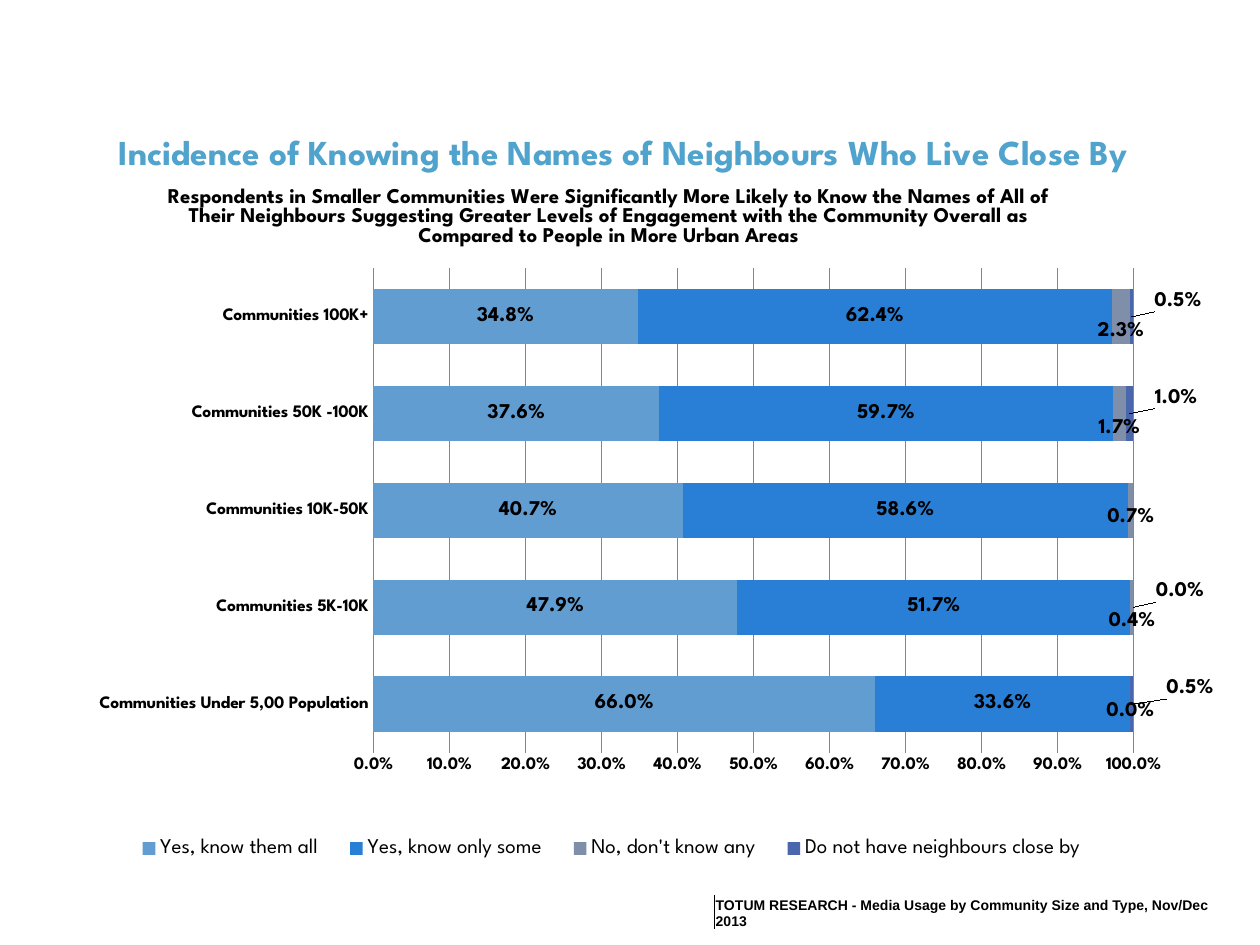
from copy import deepcopy
from dataclasses import dataclass, field

from lxml import etree
from pptx import Presentation
from pptx.chart.data import CategoryChartData
from pptx.dml.color import RGBColor
from pptx.enum import chart as ch, text
from pptx.oxml import parse_xml
from pptx.oxml.ns import nsdecls, qn
from pptx.util import Inches, Pt

BLACK = RGBColor(0x00, 0x00, 0x00)
GREY = RGBColor(0x86, 0x86, 0x86)
TITLE_BLUE = RGBColor(0x50, 0xA3, 0xCD)
LIGHT_BLUE = RGBColor(0x62, 0x9D, 0xD1)
BLUE = RGBColor(0x29, 0x7F, 0xD5)
SLATE = RGBColor(0x7F, 0x8F, 0xA9)
INDIGO = RGBColor(0x4A, 0x66, 0xAC)
SPARTAN = "League Spartan"
PERCENT = r"0.0\%"
HEADING = "Incidence of Knowing the Names of Neighbours Who Live Close By"
SUBTITLE = (
    "Respondents in Smaller Communities Were Significantly More Likely to Know "
    "the Names of All of Their Neighbours Suggesting Greater Levels of Engagement "
    "with the Community Overall as Compared to People in More Urban Areas"
)
SOURCE = "TOTUM RESEARCH - Media Usage by Community Size and Type, Nov/Dec 2013"
COMMUNITIES = [
    "Communities Under 5,00 Population",
    "Communities 5K-10K",
    "Communities 10K-50K",
    "Communities 50K -100K",
    "Communities 100K+",
]


@dataclass
class Answer:
    name: str
    values: list[float]
    color: RGBColor
    offsets: list[tuple[float, float] | None] = field(default_factory=list)


ANSWERS = [
    Answer("Yes, know them all", [66, 47.9, 40.7, 37.6, 34.8], LIGHT_BLUE),
    Answer("Yes, know only some", [33.6, 51.7, 58.6, 59.7, 62.4], BLUE),
    Answer("No, don't know any", [0, 0.4, 0.7, 1.7, 2.3], SLATE,
           [(0, 0.01), (0, 0.02), (0, 0.01), (0, 0.02), (0, 0.02)]),
    Answer("Do not have neighbours close by", [0.5, 0, 0, 1, 0.5], INDIGO,
           [(0.05, -0.02), (0.04, -0.02), None, (0.04, -0.02), (0.04, -0.02)]),
]


def style_font(font, size: float, bold: bool, color: RGBColor = BLACK,
               name: str = SPARTAN) -> None:
    font.name, font.size, font.bold = name, Pt(size), bold
    font.color.rgb = color


def set_layout(parent, index: int, **values: object) -> None:
    for old in parent.findall(qn("c:layout")):
        parent.remove(old)
    layout = parse_xml(f"<c:layout {nsdecls('c')}><c:manualLayout/></c:layout>")
    for tag, value in values.items():
        etree.SubElement(layout[0], qn(f"c:{tag}")).set("val", str(value))
    parent.insert(index, layout)


def add_point_label(labels, idx: int, offset: tuple[float, float] | None) -> None:
    label = parse_xml(f'<c:dLbl {nsdecls("c")}><c:idx val="{idx}"/></c:dLbl>')
    if offset is None:
        etree.SubElement(label, qn("c:delete")).set("val", "1")
    else:
        set_layout(label, 1, x=offset[0], y=offset[1])
        for tag in ("c:numFmt", "c:txPr"):
            label.append(deepcopy(labels.find(qn(tag))))
        for part in ("LegendKey", "Val", "CatName", "SerName", "Percent", "BubbleSize"):
            show = etree.SubElement(label, qn(f"c:show{part}"))
            show.set("val", "1" if part == "Val" else "0")
    labels.insert(idx, label)


def style_series(series, answer: Answer) -> None:
    series.format.fill.solid()
    series.format.fill.fore_color.rgb = answer.color
    labels = series.data_labels
    labels.show_value = True
    labels.number_format = PERCENT
    labels.number_format_is_linked = False
    style_font(labels.font, 12, True)
    element = series.format.fill and series._element.find(qn("c:dLbls"))
    for idx, offset in enumerate(answer.offsets):
        add_point_label(element, idx, offset)


def add_neighbour_chart(s) -> None:
    data = CategoryChartData()
    data.categories = COMMUNITIES
    for answer in ANSWERS:
        data.add_series(answer.name, answer.values)
    chart = s.shapes.add_chart(
        ch.XL_CHART_TYPE.BAR_STACKED,
        Inches(0.38), Inches(1.21), Inches(9.25), Inches(5.94), data).chart
    style_font(chart.font, 10, False)

    chart.has_title = True
    tf = chart.chart_title.text_frame
    tf.text = SUBTITLE
    style_font(tf.paragraphs[0].runs[0].font, 12, True)

    chart.has_legend = True
    chart.legend.position = ch.XL_LEGEND_POSITION.BOTTOM
    chart.legend.include_in_layout = False
    style_font(chart.legend.font, 12, False)

    plot = chart.plots[0]
    plot.gap_width, plot.overlap, plot.vary_by_categories = 75, 100, False
    for series, answer in zip(plot.series, ANSWERS):
        style_series(series, answer)

    for axis in (chart.category_axis, chart.value_axis):
        axis.major_tick_mark = axis.minor_tick_mark = ch.XL_TICK_MARK.NONE
        style_font(axis.tick_labels.font, 10, True)
    chart.category_axis.format.line.color.rgb = GREY
    axis = chart.value_axis
    axis.minimum_scale, axis.maximum_scale, axis.major_unit = 0, 100, 10
    axis.format.line.fill.background()
    axis.major_gridlines.format.line.color.rgb = GREY
    axis.tick_labels.number_format = PERCENT
    axis.tick_labels.number_format_is_linked = False

    root = chart.element.find(qn("c:chart"))
    edges = {"xMode": "edge", "yMode": "edge"}
    set_layout(root.find(qn("c:title")), 1, **edges, x=0.1, y=0.04)
    set_layout(root.find(qn("c:legend")), 1, **edges, x=0.06, y=0.9, w=0.85, h=0.06)
    set_layout(root.find(qn("c:plotArea")), 0, layoutTarget="inner", **edges,
               x=0.28, y=0.155, w=0.654, h=0.647)


def add_heading(s) -> None:
    tf = s.shapes.add_textbox(
        Inches(0.38), Inches(0.99), Inches(9.14), Inches(0.44)).text_frame
    tf.word_wrap = True
    tf.auto_size = text.MSO_AUTO_SIZE.SHAPE_TO_FIT_TEXT
    tf.text = HEADING
    p = tf.paragraphs[0]
    p.alignment = text.PP_ALIGN.CENTER
    style_font(p.runs[0].font, 20, True, TITLE_BLUE)


def add_source_table(s) -> None:
    table = s.shapes.add_table(
        1, 1, Inches(5.67), Inches(7.1), Inches(4.21), Inches(0.18)).table
    table.first_row = table.horz_banding = False
    cell = table.cell(0, 0)
    cell.margin_left = cell.margin_right = cell.margin_top = Inches(0.01)
    cell.margin_bottom = 0
    cell.vertical_anchor = text.MSO_ANCHOR.BOTTOM
    cell.text = SOURCE
    style_font(cell.text_frame.paragraphs[0].runs[0].font, 8, True, name="Arial")
    cell.fill.background()
    tc_pr = cell._tc.get_or_add_tcPr()
    black_fill = '<a:solidFill><a:srgbClr val="000000"/></a:solidFill>'
    for i, side in enumerate("LRTB"):
        fill = black_fill if side == "L" else "<a:noFill/>"
        tc_pr.insert(i, parse_xml(
            f'<a:ln{side} {nsdecls("a")} w="{Pt(0.5)}">{fill}</a:ln{side}>'))


def main() -> None:
    prs = Presentation()
    prs.slide_width, prs.slide_height = Inches(10), Inches(7.5)
    s = prs.slides.add_slide(prs.slide_layouts[6])
    add_neighbour_chart(s)
    add_heading(s)
    add_source_table(s)
    prs.save("out.pptx")


if __name__ == "__main__":
    main()
